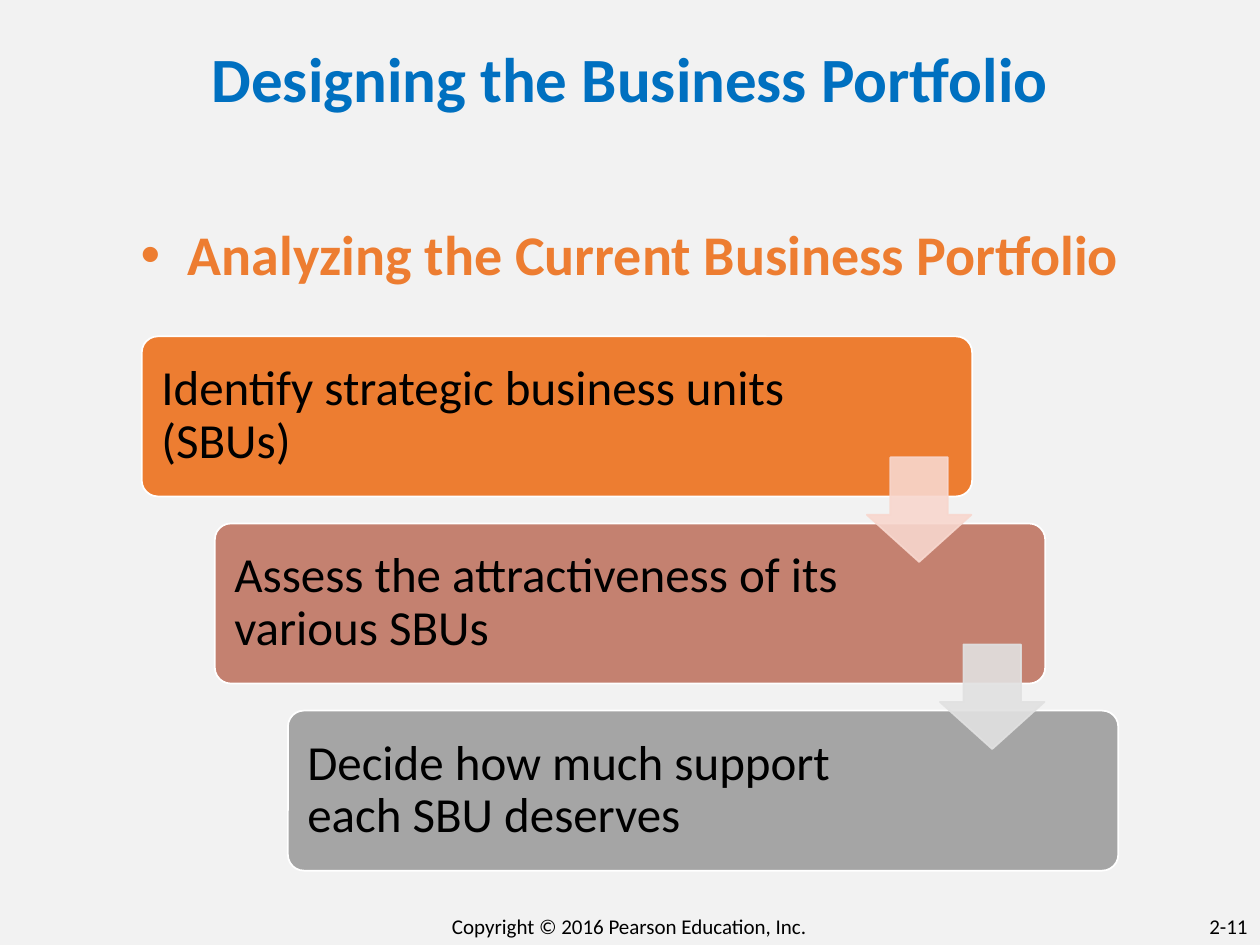
from lxml.etree import SubElement
from pptx import Presentation
from pptx.dml.color import RGBColor
from pptx.enum.shapes import MSO_SHAPE as SHAPE
from pptx.enum.text import MSO_ANCHOR as ANCHOR, MSO_AUTO_SIZE as AUTO, PP_ALIGN as ALIGN
from pptx.oxml.ns import qn
from pptx.util import Inches, Pt

BACKGROUND = RGBColor(0xF2, 0xF2, 0xF2)
BLUE = RGBColor(0x00, 0x70, 0xC0)
ORANGE = RGBColor(0xED, 0x7D, 0x31)
ROSE = RGBColor(0xC4, 0x81, 0x70)
GRAY = RGBColor(0xA5, 0xA5, 0xA5)
PALE_ROSE = RGBColor(0xF8, 0xD7, 0xCE)
PALE_GRAY = RGBColor(0xE1, 0xE1, 0xE1)
WHITE = RGBColor(0xFF, 0xFF, 0xFF)
BLACK = RGBColor(0x00, 0x00, 0x00)

STEPS = [
    ("Identify strategic business units (SBUs)", ORANGE, 5.21),
    ("Assess the attractiveness of its various SBUs", ROSE, 5.1),
    ("Decide how much support each SBU deserves", GRAY, 5.1),
]
LEFT, TOP, STEP_X, STEP_Y = 1.125, 2.67, 0.58, 1.485


def place(s, left, top, width, height):
    """Move and size a shape, in inches."""
    s.left, s.top, s.width, s.height = map(Inches, (left, top, width, height))


def write(tf, text, size, color, align=ALIGN.LEFT, bold=False, spacing=None):
    """Fill a text frame with one formatted paragraph."""
    tf.word_wrap = True
    tf.text = text
    p = tf.paragraphs[0]
    p.alignment = align
    p.line_spacing = spacing
    font = p.runs[0].font
    font.name, font.size, font.bold = "Calibri", Pt(size), bold
    font.color.rgb = color


def add_heading(s, box, text, size, color, anchor):
    """Place a placeholder and set its bold centred heading."""
    place(s, *box)
    tf = s.text_frame
    tf.auto_size = AUTO.NONE
    tf.vertical_anchor = anchor
    pPr = tf.paragraphs[0]._p.get_or_add_pPr()
    pPr.set("marL", "0")
    pPr.set("indent", "0")
    SubElement(pPr, qn("a:buNone"))
    write(tf, text, size, color, ALIGN.CENTER, True, 0.9)
    tf.paragraphs[0].space_before = Pt(0)


def add_text(slide, box, text, size, align=ALIGN.LEFT, spacing=None):
    """Add a text box and return its text frame."""
    tf = slide.shapes.add_textbox(*map(Inches, box)).text_frame
    write(tf, text, size, BLACK, align, spacing=spacing)
    return tf


def add_block(slide, kind, box, adjustments, fill, line):
    """Add a filled preset shape with a thin outline."""
    s = slide.shapes.add_shape(kind, *map(Inches, box))
    s.shadow.inherit = False
    for i, value in enumerate(adjustments):
        s.adjustments[i] = value
    s.fill.solid()
    s.fill.fore_color.rgb = fill
    s.line.color.rgb = line
    s.line.width = Pt(1)
    return s


def add_step(slide, i, text, fill, text_width):
    """Add one stair of the process with its label."""
    x, y = LEFT + i * STEP_X, TOP + i * STEP_Y
    add_block(slide, SHAPE.ROUNDED_RECTANGLE, (x, y, 6.59, 1.27), [0.1], fill, WHITE)
    tf = add_text(slide, (x + 0.035, y + 0.035, text_width, 1.2), text, 28, spacing=0.9)
    tf.vertical_anchor = ANCHOR.MIDDLE
    tf.margin_left = tf.margin_right = tf.margin_top = tf.margin_bottom = Inches(0.12)


def add_arrow(slide, i, color):
    """Add a translucent arrow leading to the next stair."""
    box = (6.88 + i * STEP_X, 3.63 + i * STEP_Y, 0.83, 0.83)
    s = add_block(slide, SHAPE.DOWN_ARROW, box, [0.55, 0.45], color, color)
    for clr in s._element.spPr.iter(qn("a:srgbClr")):
        SubElement(clr, qn("a:alpha"), val="90000")


def main():
    """Build and save the slide."""
    prs = Presentation()
    prs.slide_width, prs.slide_height = Inches(10), Inches(7.5)
    slide = prs.slides.add_slide(prs.slide_layouts[1])
    slide.background.fill.solid()
    slide.background.fill.fore_color.rgb = BACKGROUND
    title, body = slide.placeholders
    add_heading(title, (0.75, 0.42, 8.5, 0.46), "Designing the Business Portfolio",
                36, BLUE, ANCHOR.MIDDLE)
    add_heading(body, (0.25, 1.75, 9.5, 0.58), "Analyzing the Current Business Portfolio",
                32, ORANGE, ANCHOR.TOP)
    for i, step in enumerate(STEPS):
        add_step(slide, i, *step)
    for i, color in enumerate((PALE_ROSE, PALE_GRAY)):
        add_arrow(slide, i, color)
    add_text(slide, (3.21, 7.2, 3.57, 0.3), "Copyright © 2016 Pearson Education, Inc.",
             12, ALIGN.CENTER)
    add_text(slide, (9.04, 7.2, 0.96, 0.3), "2-11", 12, ALIGN.RIGHT)
    prs.save("out.pptx")


if __name__ == "__main__":
    main()
